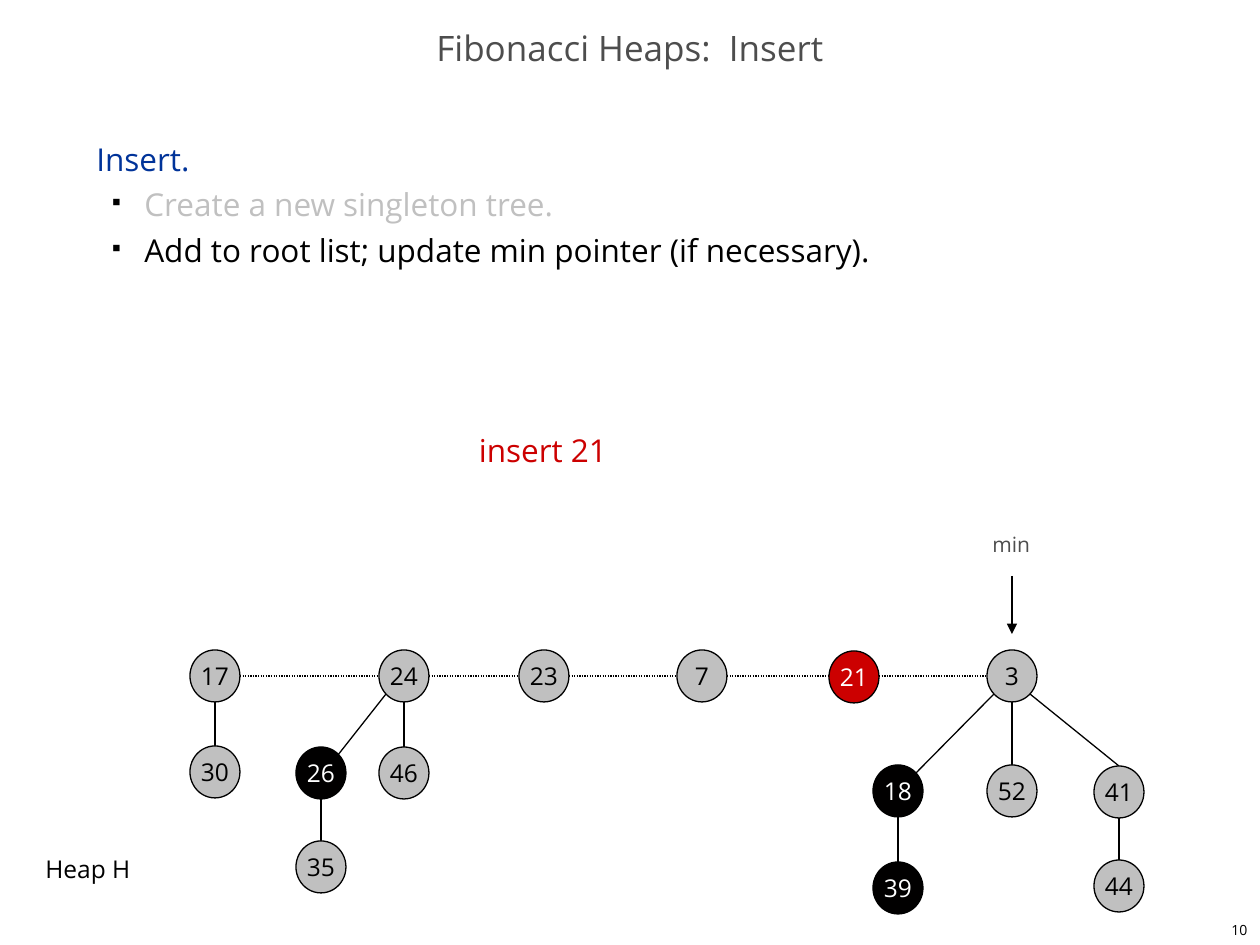
import pptx
import pptx.util
import pptx.dml.color
import pptx.enum.dml
import pptx.enum.shapes
import pptx.enum.text
import pptx.oxml
import pptx.oxml.ns
from lxml import etree

RGB = pptx.dml.color.RGBColor
BLACK = RGB(0, 0, 0)
WHITE = RGB(255, 255, 255)
MARKED = RGB(0x01, 0, 0)
SILVER = RGB(0xC0, 0xC0, 0xC0)
GRAY = RGB(0x4D, 0x4D, 0x4D)
BLUE = RGB(0x00, 0x33, 0x99)
RED = RGB(0xCC, 0, 0)

ALIGN = pptx.enum.text.PP_ALIGN
ANCHOR = pptx.enum.text.MSO_ANCHOR
FONT = "Open Sans"
SCALE = 914400 / 126  # EMU per px
NODE_W, NODE_H = 50, 52

# Directions from the centre of a node to its rim
TOP, BOTTOM, LEFT, RIGHT = (0, -1), (0, 1), (-1, 0), (1, 0)
TOP_RIGHT, BOTTOM_LEFT, BOTTOM_RIGHT = (0.7, -0.7), (-0.7, 0.7), (0.7, 0.7)

# key: centre x, centre y, fill
NODES = {
    17: (215, 676, SILVER), 24: (404, 676, SILVER), 23: (544, 676, SILVER),
    7: (702, 676, SILVER), 21: (854, 677, RED), 3: (1012, 676, SILVER),
    30: (215, 772, SILVER), 26: (321, 773, MARKED), 46: (404, 773, SILVER),
    35: (321, 867, SILVER), 18: (898, 791, MARKED), 52: (1012, 791, SILVER),
    41: (1119, 792, SILVER), 39: (898, 888, MARKED), 44: (1119, 886, SILVER),
}
ROOT_LINKS = [(17, 24), (24, 23), (23, 7), (7, 3)]
STRAIGHT_EDGES = [(17, 30), (24, 46), (26, 35), (3, 52), (18, 39), (41, 44)]
SLANTED_EDGES = [
    (24, BOTTOM_LEFT, 26, TOP_RIGHT),
    (3, BOTTOM_LEFT, 18, TOP_RIGHT),
    (3, BOTTOM_RIGHT, 41, TOP),
]


def px(n):
    return pptx.util.Emu(round(n * SCALE))


def rim(key, side):
    x, y, _ = NODES[key]
    return round(x + side[0] * NODE_W / 2), round(y + side[1] * NODE_H / 2)


class Deck:
    def __init__(self, width, height):
        self.prs = pptx.Presentation()
        self.prs.slide_width, self.prs.slide_height = px(width), px(height)
        self.s = self.prs.slides.add_slide(self.prs.slide_layouts[6])

    def run(self, p, text, size, color):
        r = p.add_run()
        r.text = text
        r.font.name = FONT
        r.font.size = pptx.util.Pt(size)
        r.font.color.rgb = color

    def text(self, x, y, w, h, text, size, color, align=ALIGN.LEFT,
             anchor=ANCHOR.TOP, wrap=False):
        tf = self.s.shapes.add_textbox(px(x), px(y), px(w), px(h)).text_frame
        tf.word_wrap = wrap
        tf.vertical_anchor = anchor
        p = tf.paragraphs[0]
        p.alignment = align
        self.run(p, text, size, color)
        return tf

    def bullet(self, tf, text, size, color):
        p = tf.add_paragraph()
        p.level = 1
        pPr = p._p.get_or_add_pPr()
        pPr.set("marL", str(px(48)))
        pPr.set("indent", str(px(-32)))
        ns = pptx.oxml.ns.nsdecls("a")
        for xml in (f'<a:buClr {ns}><a:srgbClr val="000000"/></a:buClr>',
                    f'<a:buSzPct {ns} val="35000"/>',
                    f'<a:buChar {ns} char="■"/>'):
            pPr.append(pptx.oxml.parse_xml(xml))
        self.run(p, text, size, color)

    def line(self, start, end, dotted=False, arrow=False):
        c = self.s.shapes.add_connector(
            pptx.enum.shapes.MSO_CONNECTOR.STRAIGHT,
            *(px(n) for n in (*start, *end)))
        c.line.color.rgb = BLACK
        c.line.width = pptx.util.Pt(0.75)
        if dotted:
            c.line.dash_style = pptx.enum.dml.MSO_LINE.ROUND_DOT
        if arrow:
            etree.SubElement(c.line._get_or_add_ln(),
                             pptx.oxml.ns.qn("a:tailEnd"), type="triangle")
        etree.SubElement(c._element.spPr, pptx.oxml.ns.qn("a:effectLst"))

    def node(self, key):
        x, y, fill = NODES[key]
        sp = self.s.shapes.add_shape(
            pptx.enum.shapes.MSO_SHAPE.OVAL, px(x - NODE_W / 2),
            px(y - NODE_H / 2), px(NODE_W), px(NODE_H))
        sp.shadow.inherit = False
        sp.fill.solid()
        sp.fill.fore_color.rgb = fill
        sp.line.color.rgb = BLACK
        sp.line.width = pptx.util.Pt(0.75)
        tf = sp.text_frame
        tf.word_wrap = False
        tf.vertical_anchor = ANCHOR.MIDDLE
        p = tf.paragraphs[0]
        p.alignment = ALIGN.CENTER
        self.run(p, str(key), 14, BLACK if fill == SILVER else WHITE)


def main():
    deck = Deck(1260, 945)

    # Title and page number
    tf = deck.text(0, 21, 1260, 63, "Fibonacci Heaps:  Insert", 20, GRAY,
                   ALIGN.CENTER, ANCHOR.MIDDLE, wrap=True)
    tf.paragraphs[0].line_spacing = 0.7
    deck.text(998, 914, 262, 31, "10", 8, BLACK, ALIGN.RIGHT, ANCHOR.MIDDLE)

    # Steps of the operation
    tf = deck.text(84, 126, 1081, 746, "Insert.", 18, BLUE, wrap=True)
    deck.bullet(tf, "Create a new singleton tree.", 18, SILVER)
    deck.bullet(tf, "Add to root list; update min pointer (if necessary).",
                18, BLACK)
    for p in tf.paragraphs:
        p.line_spacing = pptx.util.Pt(26)

    # Root list and tree edges
    for a, b in ROOT_LINKS:
        deck.line(rim(a, RIGHT), rim(b, LEFT), dotted=True)
    for parent, child in STRAIGHT_EDGES:
        deck.line(rim(parent, BOTTOM), rim(child, TOP))
    for parent, out_side, child, in_side in SLANTED_EDGES:
        deck.line(rim(parent, out_side), rim(child, in_side))

    # Nodes
    for key in NODES:
        deck.node(key)

    # Labels and min pointer
    deck.text(980, 525, 64, 38, "min", 12, GRAY)
    deck.line((1012, 576), (1012, 634), arrow=True)
    deck.text(33, 848, 112, 42, "Heap H", 14, BLACK)
    deck.text(422, 425, 242, 50, "insert 21", 18, RED, ALIGN.CENTER, wrap=True)

    deck.prs.save("out.pptx")


if __name__ == "__main__":
    main()
